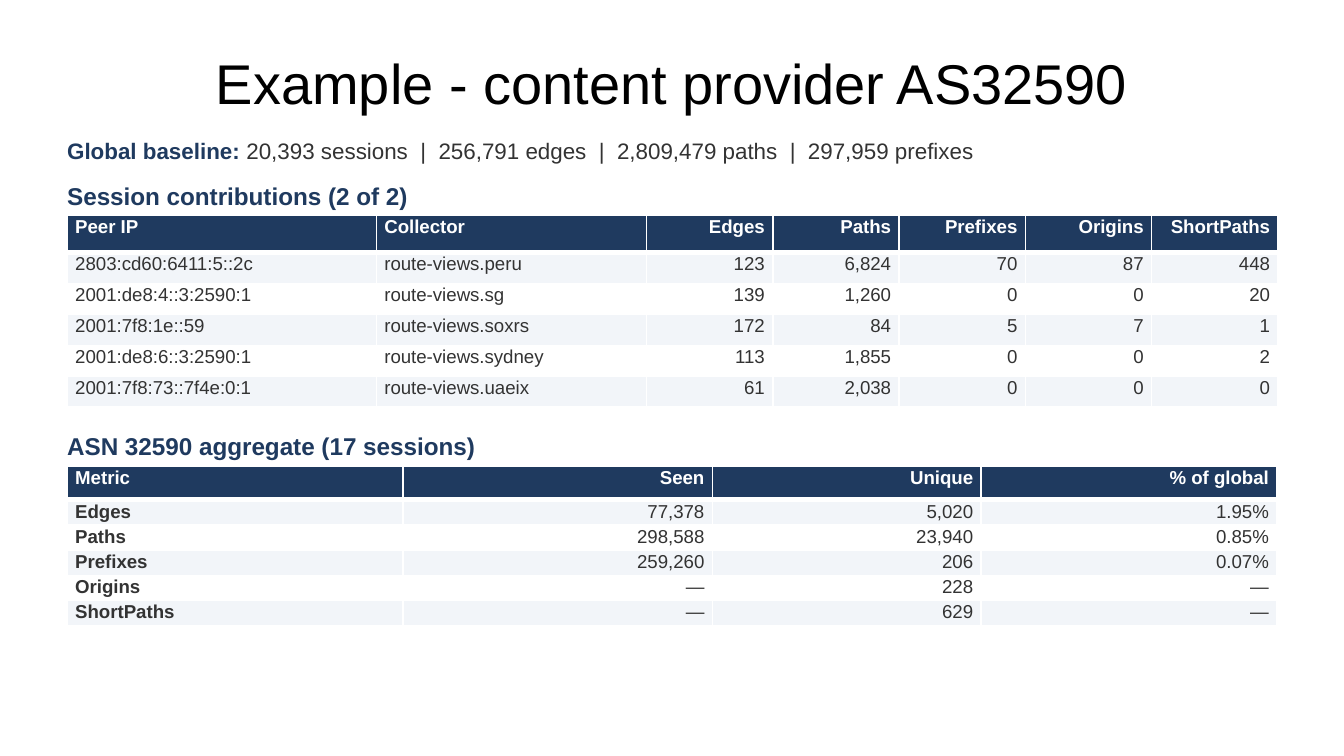
from lxml.etree import SubElement
from pptx import Presentation
from pptx.dml.color import RGBColor
from pptx.enum.text import MSO_ANCHOR, MSO_AUTO_SIZE, PP_ALIGN
from pptx.oxml.ns import qn
from pptx.util import Inches, Pt

NAVY = RGBColor(0x1F, 0x3A, 0x5F)
INK = RGBColor(0x33, 0x33, 0x33)
BAND = RGBColor(0xF2, 0xF5, 0xF9)
WHITE = RGBColor(0xFF, 0xFF, 0xFF)
BLACK = RGBColor(0x00, 0x00, 0x00)

LEFT, WIDTH = 0.5, 9
HEADING = {"size": 13, "bold": True, "color": NAVY}
HEADER_BORDERS = {"a:lnL": 1, "a:lnR": 1, "a:lnT": 1, "a:lnB": 3}

BASELINE = ["20,393 sessions", "256,791 edges", "2,809,479 paths", "297,959 prefixes"]

SESSIONS = [
    ["Peer IP", "Collector", "Edges", "Paths", "Prefixes", "Origins", "ShortPaths"],
    ["2803:cd60:6411:5::2c", "route-views.peru", "123", "6,824", "70", "87", "448"],
    ["2001:de8:4::3:2590:1", "route-views.sg", "139", "1,260", "0", "0", "20"],
    ["2001:7f8:1e::59", "route-views.soxrs", "172", "84", "5", "7", "1"],
    ["2001:de8:6::3:2590:1", "route-views.sydney", "113", "1,855", "0", "0", "2"],
    ["2001:7f8:73::7f4e:0:1", "route-views.uaeix", "61", "2,038", "0", "0", "0"],
]

AGGREGATE = [
    ["Metric", "Seen", "Unique", "% of global"],
    ["Edges", "77,378", "5,020", "1.95%"],
    ["Paths", "298,588", "23,940", "0.85%"],
    ["Prefixes", "259,260", "206", "0.07%"],
    ["Origins", "—", "228", "—"],
    ["ShortPaths", "—", "629", "—"],
]


def add_run(p, text, size, color, bold=False):
    r = p.add_run()
    r.text = text
    for name, value in {"name": "Arial", "size": Pt(size), "bold": bold}.items():
        setattr(r.font, name, value)
    r.font.color.rgb = color


def set_margins(target, left, top, right, bottom):
    margins = {"left": left, "top": top, "right": right, "bottom": bottom}
    for side, value in margins.items():
        setattr(target, f"margin_{side}", Inches(value))


def add_text(s, top, height, runs, margins=(0, 0, 0.1, 0.05), wrap=False,
             auto_size=MSO_AUTO_SIZE.SHAPE_TO_FIT_TEXT,
             anchor=MSO_ANCHOR.TOP, align=PP_ALIGN.LEFT):
    box = s.shapes.add_textbox(Inches(LEFT), Inches(top), Inches(WIDTH), Inches(height))
    tf = box.text_frame
    frame_format = {"word_wrap": wrap, "auto_size": auto_size, "vertical_anchor": anchor}
    for name, value in frame_format.items():
        setattr(tf, name, value)
    set_margins(tf, *margins)
    p = tf.paragraphs[0]
    p.alignment = align
    for text, style in runs:
        add_run(p, text, **style)


def add_header_borders(cell):
    # Border lines must come before the fill in the cell properties
    tc_pr = cell._tc.get_or_add_tcPr()
    for i, (tag, points) in enumerate(HEADER_BORDERS.items()):
        line = SubElement(tc_pr, qn(tag), w=str(Pt(points)))
        fill = SubElement(line, qn("a:solidFill"))
        SubElement(fill, qn("a:srgbClr"), val=str(WHITE))
        tc_pr.insert(i, line)


def add_data_table(s, top, height, header_height, widths, rows, text_cols, bold_first=False):
    """Table with a navy header, banded rows and right-aligned numbers."""
    table = s.shapes.add_table(len(rows), len(widths), Inches(LEFT), Inches(top),
                               Inches(WIDTH), Inches(height)).table
    for column, width in zip(table.columns, widths):
        column.width = Inches(width)
    body_height = (height - header_height) / (len(rows) - 1)

    for i, values in enumerate(rows):
        header = i == 0
        table.rows[i].height = Inches(header_height if header else body_height)
        fill = NAVY if header else BAND if i % 2 else WHITE
        for j, value in enumerate(values):
            cell = table.cell(i, j)
            cell.fill.solid()
            cell.fill.fore_color.rgb = fill
            set_margins(cell, 0.06, 0.01, 0.06, 0.01)
            if header:
                add_header_borders(cell)
            p = cell.text_frame.paragraphs[0]
            p.alignment = PP_ALIGN.LEFT if j < text_cols else PP_ALIGN.RIGHT
            add_run(p, value, 10, WHITE if header else INK,
                    header or (bold_first and j == 0))


def main():
    # Widescreen 16:9 slide
    prs = Presentation()
    prs.slide_width, prs.slide_height = Inches(10), Inches(10 * 9 / 16)
    s = prs.slides.add_slide(prs.slide_layouts[6])

    # Title
    add_text(s, 0.23, 0.77,
             [("Example - content provider AS32590", {"size": 30, "color": BLACK})],
             margins=(0.1, 0.05, 0.1, 0.05), wrap=True, auto_size=MSO_AUTO_SIZE.NONE,
             anchor=MSO_ANCHOR.MIDDLE, align=PP_ALIGN.CENTER)

    # Global baseline
    add_text(s, 1.02, 0.28,
             [("Global baseline: ", {"size": 12, "color": NAVY, "bold": True}),
              ("  |  ".join(BASELINE), {"size": 12, "color": INK})],
             margins=(0, 0, 0, 0))

    # Session contributions
    add_text(s, 1.35, 0.24, [("Session contributions (2 of 2)", HEADING)])
    add_data_table(s, 1.6, 1.43, 0.28, [2.3, 2.01] + [0.94] * 5, SESSIONS, text_cols=2)

    # Aggregate
    add_text(s, 3.21, 0.24, [("ASN 32590 aggregate (17 sessions)", HEADING)])
    add_data_table(s, 3.47, 1.18, 0.25, [2.5, 2.3, 2, 2.2], AGGREGATE,
                   text_cols=1, bold_first=True)

    prs.save("out.pptx")


if __name__ == "__main__":
    main()
